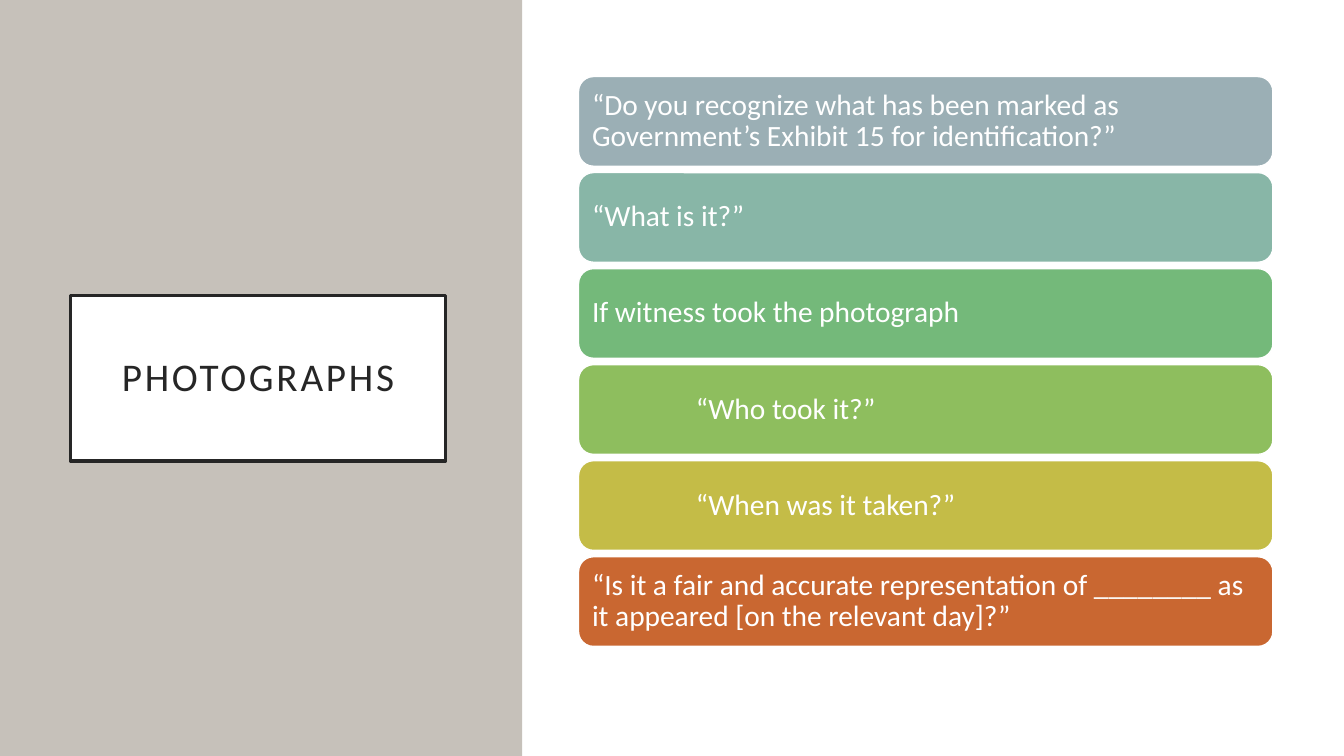
"""Build the slide on questions that lay the foundation for photographs."""
from dataclasses import dataclass

from pptx import Presentation
from pptx.dml.color import RGBColor
from pptx.enum.shapes import MSO_SHAPE as Shape
from pptx.enum.text import MSO_ANCHOR as Anchor, MSO_AUTO_SIZE as AutoSize, PP_ALIGN as Align
from pptx.util import Cm, Pt


@dataclass(frozen=True)
class Theme:
    font: str = "Calibri"
    title_size: int = 28
    question_size: int = 21
    ink: str = "262626"
    white: str = "FFFFFF"
    panel: str = "C6C1BA"


theme = Theme()


def paint(box, fill, line=None, width=1):
    box.fill.solid()
    box.fill.fore_color.rgb = RGBColor.from_string(fill)
    if line:
        box.line.color.rgb = RGBColor.from_string(line)
        box.line.width = Pt(width)
    else:
        box.line.fill.background()


def write(box, text, size, color, align, inset):
    frame = box.text_frame
    frame.word_wrap = True
    frame.auto_size = AutoSize.NONE
    frame.vertical_anchor = Anchor.MIDDLE
    frame.margin_left = frame.margin_right = Cm(inset)
    frame.margin_top = frame.margin_bottom = Cm(inset)
    para = frame.paragraphs[0]
    para.alignment = align
    para.line_spacing = 0.9
    span = para.add_run()
    span.text = text
    span.font.name = theme.font
    span.font.size = Pt(size)
    span.font.color.rgb = RGBColor.from_string(color)
    return para


deck = Presentation()
deck.slide_width, deck.slide_height = Cm(33.87), Cm(19.05)
page = deck.slides.add_slide(deck.slide_layouts[5])
title = page.shapes.title

for left, width, fill in ((0, 13.16, theme.panel), (13.2, 20.67, theme.white)):
    panel = page.shapes.add_shape(Shape.RECTANGLE, Cm(left), 0, Cm(width), deck.slide_height)
    panel.shadow.inherit = False
    paint(panel, fill)
    title.element.addprevious(panel.element)

title.left, title.top, title.width, title.height = Cm(1.78), Cm(7.45), Cm(9.45), Cm(4.17)
paint(title, theme.white, theme.ink, 2.5)
heading = write(title, "PHOTOGRAPHS", theme.title_size, theme.ink, Align.CENTER, 0.51)
heading.runs[0].font._element.set("spc", "200")

questions = (
    ("“Do you recognize what has been marked as Government’s Exhibit 15 for identification?”", "9BAFB5", 0),
    ("“What is it?”", "88B6A7", 0),
    ("If witness took the photograph", "74B97A", 0),
    ("“Who took it?”", "8EBE5E", 2.62),
    ("“When was it taken?”", "C4BC47", 2.62),
    ("“Is it a fair and accurate representation of ________ as it appeared [on the relevant day]?”", "C96731", 0),
)
first_top, pitch = 1.93, 2.42
for row, (question, fill, indent) in enumerate(questions):
    bar = page.shapes.add_shape(
        Shape.ROUNDED_RECTANGLE, Cm(14.58), Cm(first_top + row * pitch), Cm(17.5), Cm(2.26))
    bar.shadow.inherit = False
    paint(bar, fill, theme.white)
    para = write(bar, question, theme.question_size, theme.white, Align.LEFT, 0.23)
    para._p.get_or_add_pPr().set("marL", str(Cm(indent)))

deck.save("out.pptx")
